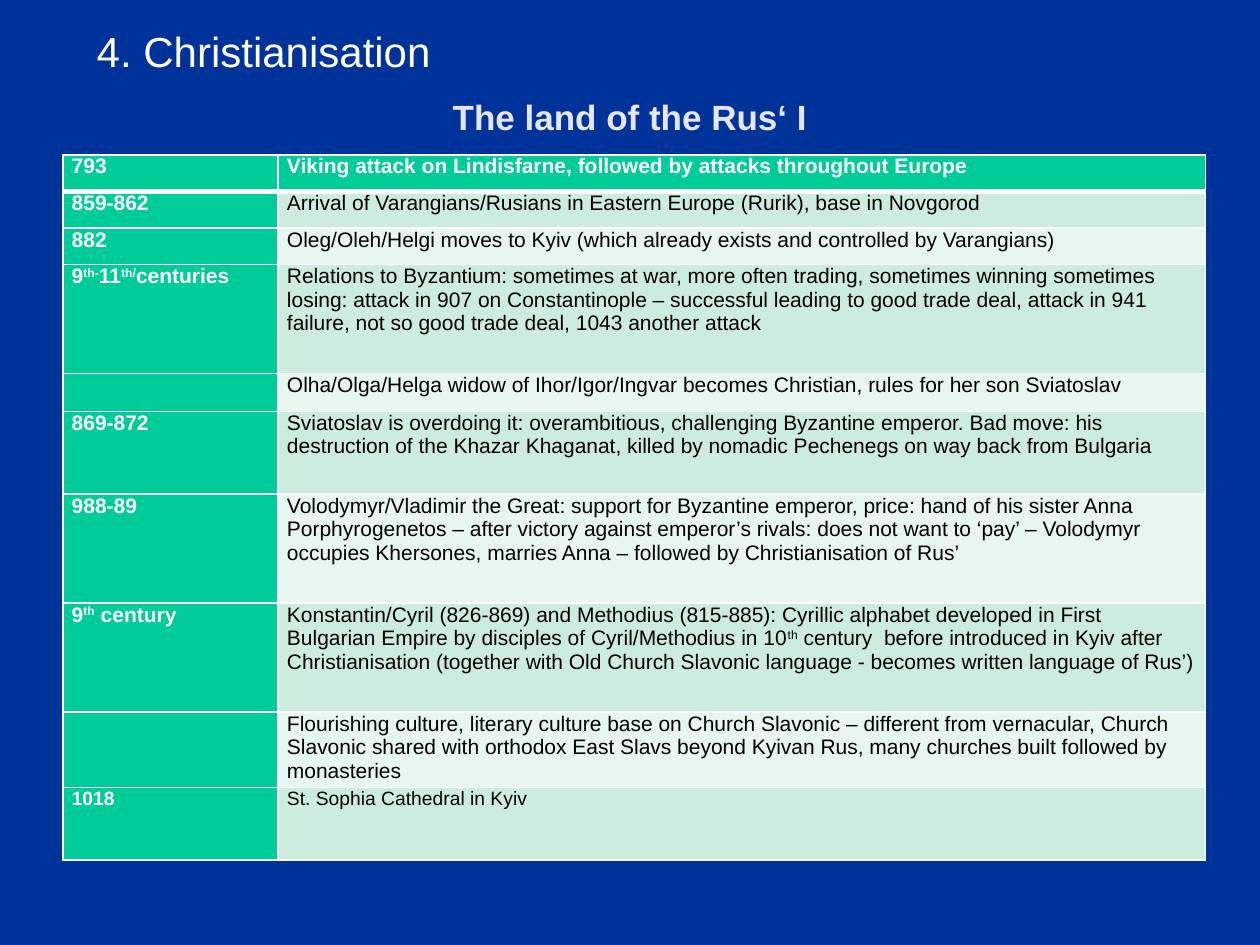
from dataclasses import dataclass

from lxml.etree import SubElement
from pptx import Presentation
from pptx.dml.color import RGBColor
from pptx.enum.text import MSO_ANCHOR, PP_ALIGN
from pptx.oxml.ns import qn
from pptx.util import Pt


@dataclass(frozen=True)
class Theme:
    font: str = "Arial"
    background: str = "003399"
    white: str = "FFFFFF"
    black: str = "000000"
    subtitle: str = "E5E5FF"
    accent: str = "00CC99"
    bands: tuple = ("E7F6EF", "CCECDE")
    heading_size: float = 24
    subtitle_size: float = 20
    body_size: float = 12
    small_size: float = 11
    thin: float = 1
    thick: float = 3


THEME = Theme()
COLUMNS = (123, 530)
EVENTS = (
    (20.9, "793", "Viking attack on Lindisfarne, followed by attacks throughout Europe"),
    (20.9, "859-862", "Arrival of Varangians/Rusians in Eastern Europe (Rurik), base in Novgorod"),
    (20.9, "882", "Oleg/Oleh/Helgi moves to Kyiv (which already exists and controlled by Varangians)"),
    (62.3, "9^th-^11^th/^centuries",
     "Relations to Byzantium: sometimes at war, more often trading, sometimes winning sometimes "
     "losing: attack in 907 on Constantinople – successful leading to good trade deal, attack in 941 "
     "failure, not so good trade deal, 1043 another attack"),
    (20.9, "", "Olha/Olga/Helga widow of Ihor/Igor/Ingvar becomes Christian, rules for her son Sviatoslav"),
    (47.2, "869-872",
     "Sviatoslav is overdoing it: overambitious, challenging Byzantine emperor. Bad move: his "
     "destruction of the Khazar Khaganat, killed by nomadic Pechenegs on way back from Bulgaria"),
    (62.3, "988-89",
     "Volodymyr/Vladimir the Great: support for Byzantine emperor, price: hand of his sister Anna "
     "Porphyrogenetos – after victory against emperor’s rivals: does not want to ‘pay’ – Volodymyr "
     "occupies Khersones, marries Anna – followed by Christianisation of Rus’"),
    (62.3, "9^th^ century",
     "Konstantin/Cyril (826-869) and Methodius (815-885): Cyrillic alphabet developed in First "
     "Bulgarian Empire by disciples of Cyril/Methodius in 10^th^ century  before introduced in Kyiv after "
     "Christianisation (together with Old Church Slavonic language - becomes written language of Rus’)"),
    (41.5, "",
     "Flourishing culture, literary culture base on Church Slavonic – different from vernacular, Church "
     "Slavonic shared with orthodox East Slavs beyond Kyivan Rus, many churches built followed by "
     "monasteries"),
    (41.5, "1018", "St. Sophia Cathedral in Kyiv"),
)


def write_text(frame, text, size=THEME.body_size, color=THEME.white, bold=False, align=PP_ALIGN.LEFT):
    para = frame.paragraphs[0]
    para.alignment = align
    for index, part in enumerate(text.split("^")):
        if not part:
            continue
        span = para.add_run()
        span.text = part
        span.font.name = THEME.font
        span.font.size = Pt(size)
        span.font.bold = bold
        span.font.color.rgb = RGBColor.from_string(color)
        if index % 2:
            span.font._element.set("baseline", "30000")


def add_text(page, box, text, wrap=True, anchor=MSO_ANCHOR.TOP, **style):
    frame = page.shapes.add_textbox(*map(Pt, box)).text_frame
    frame.word_wrap = wrap
    frame.vertical_anchor = anchor
    write_text(frame, text, **style)


def style_cell(cell, fill, top, bottom):
    cell.margin_left = cell.margin_right = Pt(5)
    cell.margin_top = cell.margin_bottom = Pt(0)
    properties = cell._tc.get_or_add_tcPr()
    widths = {"lnL": THEME.thin, "lnR": THEME.thin, "lnT": top, "lnB": bottom}
    for side, width in widths.items():
        line = SubElement(properties, qn(f"a:{side}"), w=str(Pt(width)))
        paint = SubElement(line, qn("a:solidFill"))
        SubElement(paint, qn("a:srgbClr"), val=THEME.white)
    cell.fill.solid()
    cell.fill.fore_color.rgb = RGBColor.from_string(fill)


def add_timeline(page, left, top):
    height = sum(event[0] for event in EVENTS)
    frame = page.shapes.add_table(len(EVENTS), len(COLUMNS), Pt(left), Pt(top), Pt(sum(COLUMNS)), Pt(height))
    table = frame.table
    for column, width in zip(table.columns, COLUMNS):
        column.width = Pt(width)
    for row, (row_height, *texts) in enumerate(EVENTS):
        table.rows[row].height = Pt(row_height)
        size = THEME.small_size if row == len(EVENTS) - 1 else THEME.body_size
        for column, text in enumerate(texts):
            strong = row == 0 or column == 0
            cell = table.cell(row, column)
            style_cell(
                cell,
                fill=THEME.accent if strong else THEME.bands[row % 2],
                top=THEME.thick if row == 1 else THEME.thin,
                bottom=THEME.thick if row == 0 else THEME.thin,
            )
            write_text(cell.text_frame, text, size=size, bold=strong,
                       color=THEME.white if strong else THEME.black)


def add_headings(page, left, top):
    add_text(page, (left, top + 10.8, 648, 90), "The land of the Rus‘ I", anchor=MSO_ANCHOR.MIDDLE,
             size=THEME.subtitle_size, color=THEME.subtitle, bold=True, align=PP_ALIGN.CENTER)
    add_text(page, (left + 12.2, top, 207.4, 36), "4. Christianisation", wrap=False,
             size=THEME.heading_size)


def main():
    deck = Presentation()
    deck.slide_width, deck.slide_height = Pt(720), Pt(540)
    page = deck.slides.add_slide(deck.slide_layouts[6])
    page.background.fill.solid()
    page.background.fill.fore_color.rgb = RGBColor.from_string(THEME.background)
    add_headings(page, 36, 10.8)
    add_timeline(page, 36, 88.5)
    deck.save("out.pptx")


if __name__ == "__main__":
    main()
